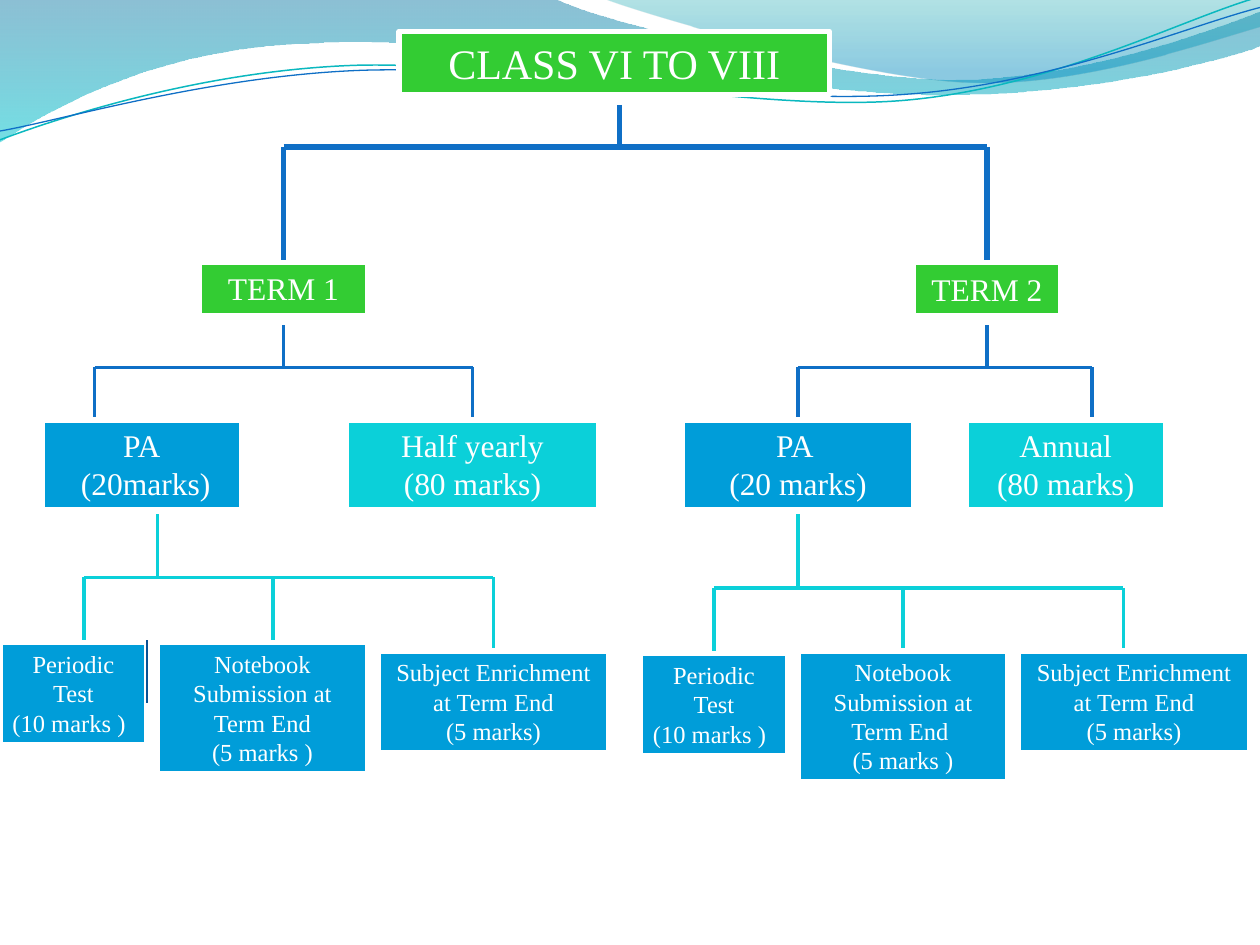
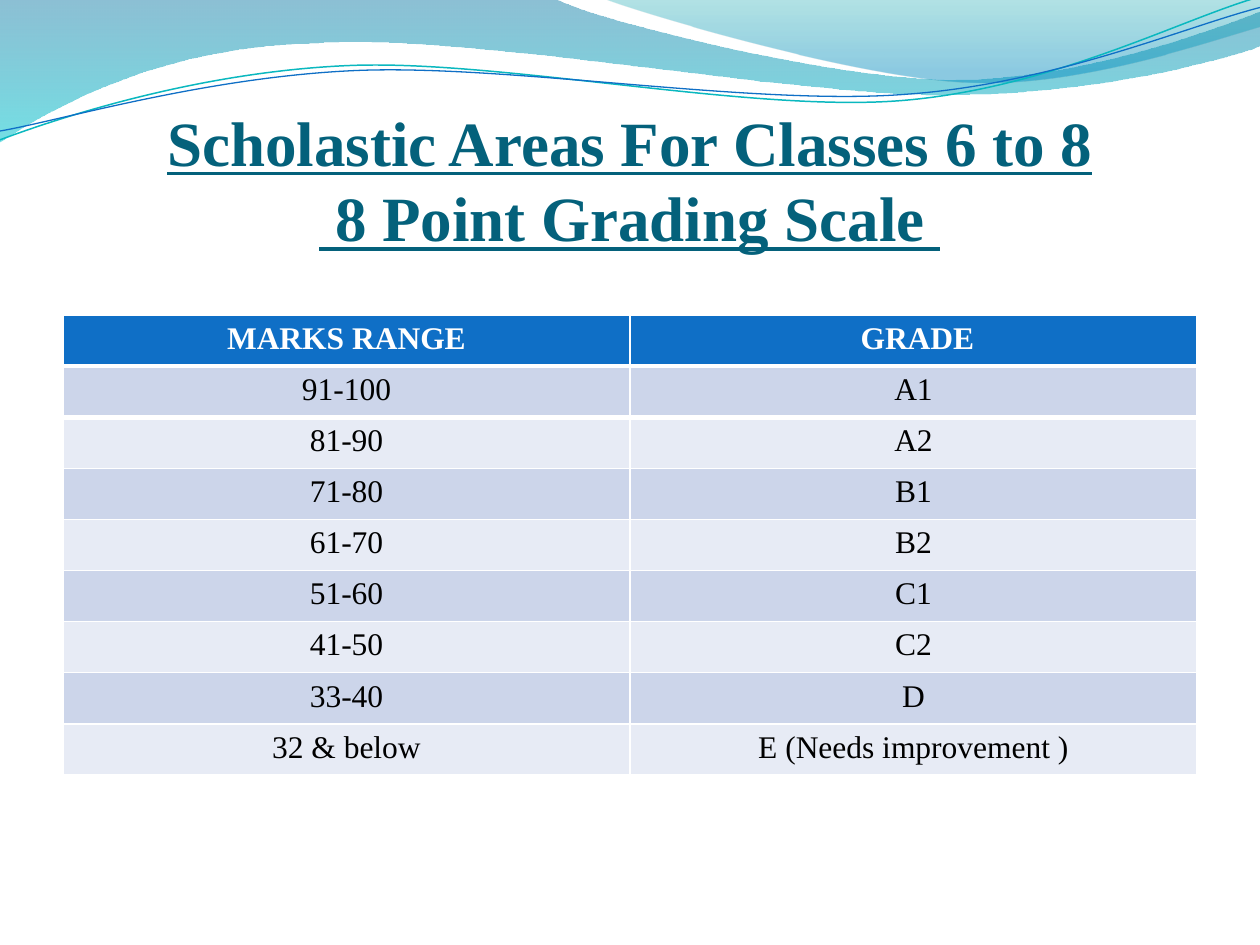
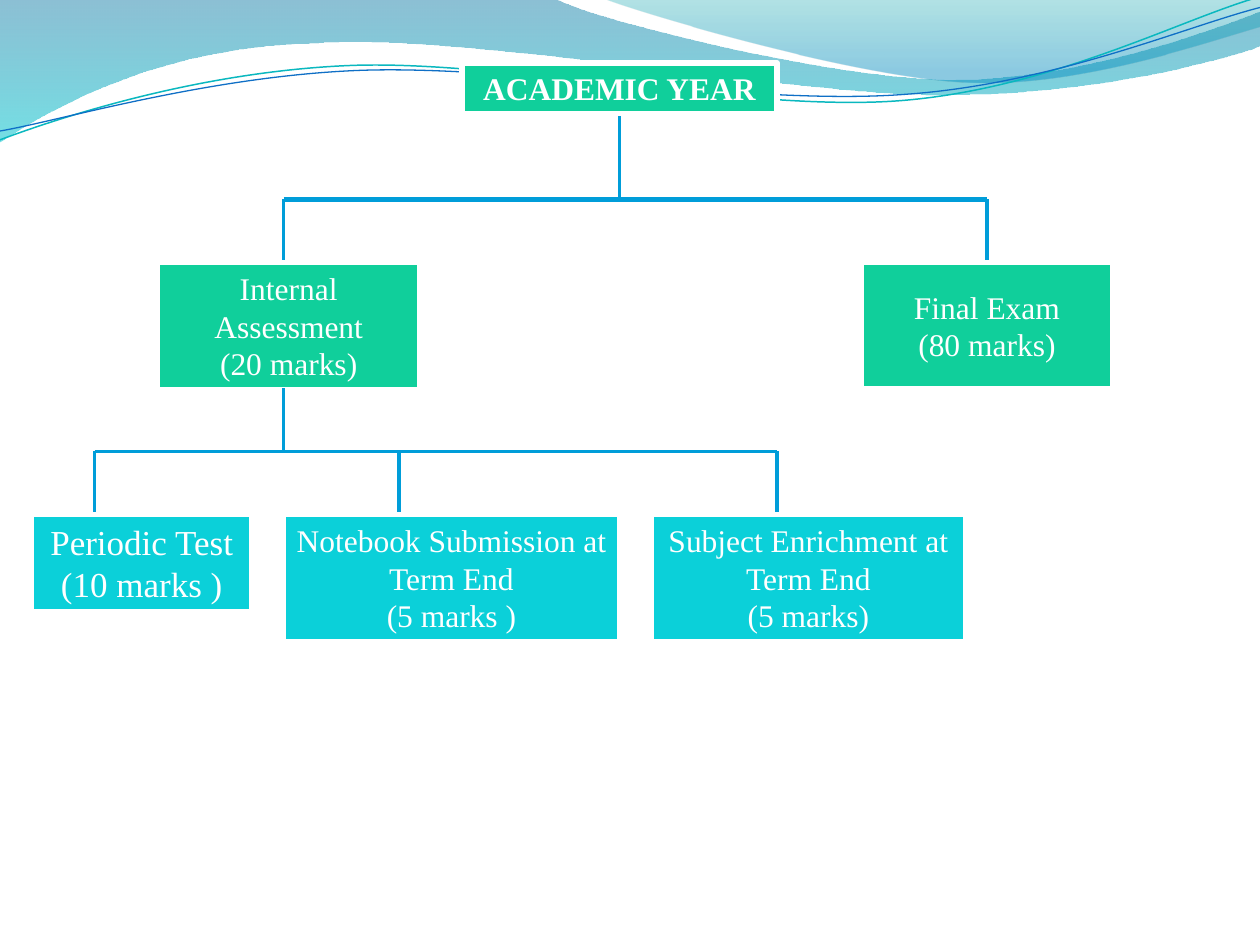
import math

import lxml.etree
import pptx
import pptx.dml.color
import pptx.enum.shapes
import pptx.enum.text
import pptx.oxml.ns
import pptx.util

Inches = pptx.util.Inches
Pt = pptx.util.Pt
RGBColor = pptx.dml.color.RGBColor
PP_ALIGN = pptx.enum.text.PP_ALIGN
MSO_ANCHOR = pptx.enum.text.MSO_ANCHOR
MSO_AUTO_SIZE = pptx.enum.text.MSO_AUTO_SIZE
MSO_SHAPE = pptx.enum.shapes.MSO_SHAPE
MSO_CONNECTOR = pptx.enum.shapes.MSO_CONNECTOR
qn = pptx.oxml.ns.qn

FONT = "Times New Roman"
GRID = 12  # the charts sit on a grid of twelfths of an inch
WHITE = RGBColor(0xFF, 0xFF, 0xFF)
BLACK = RGBColor(0x00, 0x00, 0x00)
NAVY = RGBColor(0x09, 0x52, 0x95)
BLUE = RGBColor(0x0F, 0x6F, 0xC6)
SKY = RGBColor(0x00, 0x9D, 0xD9)
CYAN = RGBColor(0x0B, 0xD0, 0xD9)
MINT = RGBColor(0x10, 0xCF, 0x9B)
GREEN = RGBColor(0x33, 0xCC, 0x33)
TITLE_TEAL = RGBColor(0x04, 0x61, 0x7B)
WAVE_LINE = RGBColor(0x0A, 0xB8, 0xBF)
WAVE_DEEP = RGBColor(0x00, 0x74, 0xA1)
WAVE_AQUA = RGBColor(0x00, 0xC6, 0xCF)
WAVE_TEAL = RGBColor(0x00, 0xA1, 0xA9)
WAVE_BLUE = RGBColor(0x00, 0x8B, 0xBF)
ROW_DARK = RGBColor(0xCC, 0xD5, 0xEA)
ROW_LIGHT = RGBColor(0xE7, 0xEB, 0xF5)


def write_text(tf, text, size=18, color=WHITE, bold=False, underline=False,
               last_align=PP_ALIGN.CENTER):
    """Fill tf with centred paragraphs, one per line; last_align sets the last."""
    tf.text = text
    for p in tf.paragraphs:
        p.alignment = PP_ALIGN.CENTER
        for r in p.runs:
            r.font.name = FONT
            r.font.size = Pt(size)
            r.font.color.rgb = color
            r.font.bold = bold
            r.font.underline = underline
    tf.paragraphs[-1].alignment = last_align


def add_line(s, x1, y1, x2, y2, color, width):
    """Draw a straight line between two grid points."""
    line = s.shapes.add_connector(MSO_CONNECTOR.STRAIGHT,
                                  *[Inches(v / GRID) for v in (x1, y1, x2, y2)])
    line.line.color.rgb = color
    line.line.width = Pt(width)
    lxml.etree.SubElement(line.element.spPr, qn("a:effectLst"))


prs = pptx.Presentation()
prs.slide_width = Inches(10)
prs.slide_height = Inches(7.5)
layout = prs.slide_layouts[6]
class_slide, grade_slide, year_slide = [prs.slides.add_slide(layout) for _ in range(3)]

# Wave band shared by all slides. A 2-number step is a straight line,
# a 6-number step a Bezier curve; stops are (position, colour, opacity %),
# an outline is (colour, width, centre of its tilt).
TILT = 2.7
waves = [
    ([(0, 0), (4.4, -0.01), (4.76, 0.17, 6.64, 0.63, 7.58, 0.63),
      (8.53, 0.63, 9.58, 0.26, 10, 0.09), (10.01, 0.36),
      (9.83, 0.44, 8.7, 0.76, 7.46, 0.75), (6.22, 0.75, 3.82, 0.28, 2.57, 0.34),
      (1.29, 0.36, 0.46, 0.83, -0.01, 1.13), (0, 0)],
     [(0, WAVE_DEEP, 45), (1, WAVE_AQUA, 55)], None),
    ([(4.79, -0.01), (5.09, 0.11, 6.82, 0.62, 7.69, 0.65),
      (8.56, 0.69, 9.61, 0.32, 10, 0.21), (10, 0), (4.79, -0.01)],
     [(0, WAVE_TEAL, 30), (0.8, WAVE_BLUE, 45)], None),
    ([(0, 1.11), (0.48, 0.93, 1.58, 0.57, 2.77, 0.52),
      (3.95, 0.47, 5.93, 0.89, 7.13, 0.8), (8.33, 0.71, 9.38, 0.15, 9.98, -0.02)],
     None, (WAVE_LINE, 0.85, (4.99, 0.57))),
    ([(0, 1.04), (0.47, 0.96, 1.64, 0.61, 2.83, 0.56),
      (4.03, 0.51, 5.97, 0.84, 7.17, 0.75), (8.36, 0.67, 9.41, 0.21, 10, 0.06)],
     None, (BLUE, 0.75, (5, 0.59))),
]
wave_shapes = []
for steps, stops, outline in waves:
    points = [pair for step in steps for pair in zip(step[::2], step[1::2])]
    if outline:
        cx, cy = outline[2]
        cos, sin = math.cos(math.radians(TILT)), math.sin(math.radians(TILT))
        points = [(cx + (x - cx) * cos - (y - cy) * sin,
                   cy + (x - cx) * sin + (y - cy) * cos) for x, y in points]
    points = [(Inches(x), Inches(y)) for x, y in points]
    builder = class_slide.shapes.build_freeform(*points[0])
    builder.add_line_segments(points[1:], close=outline is None)
    sp = builder.convert_to_shape()

    # Join the three points of each curve step into one Bezier segment
    segments = iter(list(sp.element.spPr.iter(qn("a:lnTo"))))
    for step in steps[1:]:
        segment = next(segments)
        if len(step) == 6:
            segment.tag = qn("a:cubicBezTo")
            for _ in range(2):
                extra = next(segments)
                segment.append(extra[0])
                extra.getparent().remove(extra)

    sp.shadow.inherit = False
    if outline:
        sp.rotation = 360 - TILT
        sp.fill.background()
        sp.line.color.rgb, sp.line.width = outline[0], Pt(outline[1])
    else:
        sp.line.fill.background()
        sp.fill.gradient()
        sp.fill.gradient_angle = 270
        for stop, (position, color, _) in zip(sp.fill.gradient_stops, stops):
            stop.position = position
            stop.color.rgb = color
        for clr, (_, _, opacity) in zip(sp.element.spPr.iter(qn("a:srgbClr")), stops):
            lxml.etree.SubElement(clr, qn("a:alpha")).set("val", str(opacity * 1000))
    wave_shapes.append(sp)

for placeholder in list(layout.placeholders):
    layout.shapes.element.remove(placeholder.element)
for sp in wave_shapes:
    layout.shapes.element.append(sp.element)

PERIODIC = "Periodic Test\n(10 marks )"
NOTEBOOK = "Notebook Submission at Term End\n(5 marks )"
NOTEBOOK_TERM_2 = "Notebook Submission at Term End \n(5 marks )"
ENRICHMENT = "Subject Enrichment at Term End\n(5 marks)"
plain = dict(size=18)
small = dict(size=14)
small_left = dict(size=14, last_align=PP_ALIGN.LEFT)
TOP, MIDDLE = MSO_ANCHOR.TOP, MSO_ANCHOR.MIDDLE

# Branch: slide, colour, line width, bar width, trunk x, trunk top, bar y,
# drops as (x, bottom), all in grid units.
# Box: slide, left, top, width in grid units, height in inches, colour, anchor,
# text, format.
upper_branches = [
    (class_slide, BLUE, 3, 3, 59, 10, 14, [(27, 25), (94, 25)]),
    (year_slide, SKY, 2, 3, 59, 11, 19, [(27, 25), (94, 25)]),
]
upper_boxes = [
    (class_slide, 38, 3, 41, 0.5, GREEN, TOP, "CLASS VI TO VIII", dict(size=24)),
    (class_slide, 19, 25, 16, 0.42, GREEN, TOP, "TERM 1", plain),
    (class_slide, 87, 25, 14, 0.42, GREEN, MIDDLE, "TERM 2", plain),
    (year_slide, 44, 6, 30, 0.4, MINT, TOP, "ACADEMIC YEAR", dict(bold=True)),
    (year_slide, 15, 25, 25, 1.01, MINT, TOP, "Internal Assessment\n(20 marks)", plain),
    (year_slide, 82, 25, 24, 1, MINT, MIDDLE, "Final Exam\n(80 marks)", plain),
]
lower_branches = [
    (class_slide, BLUE, 2, 2, 27, 31, 35, [(9, 40), (45, 40)]),
    (class_slide, BLUE, 2, 2, 94, 31, 35, [(76, 40), (104, 40)]),
    (class_slide, CYAN, 2, 2, 15, 49, 55, [(8, 61), (26, 61), (47, 62)]),
    (class_slide, CYAN, 2, 2, 76, 49, 56, [(68, 62), (86, 62), (107, 62)]),
    (year_slide, SKY, 2, 2, 27, 37, 43, [(9, 49), (38, 49), (74, 50)]),
]
lower_boxes = [
    (class_slide, 4, 40, 19, 0.71, SKY, TOP, "PA\n (20marks)", plain),
    (class_slide, 33, 40, 24, 0.71, CYAN, TOP, "Half yearly\n(80 marks)", plain),
    (class_slide, 65, 40, 22, 0.71, SKY, TOP, "PA \n(20 marks)", plain),
    (class_slide, 92, 40, 19, 0.71, CYAN, TOP, "Annual\n(80 marks)", plain),
    (class_slide, 0, 61.2, 14, 0.81, SKY, TOP, PERIODIC, small_left),
    (class_slide, 15, 61.2, 20, 1.04, SKY, TOP, NOTEBOOK, small),
    (class_slide, 36, 62, 22, 0.81, SKY, TOP, ENRICHMENT, small),
    (class_slide, 61, 62.25, 14, 0.81, SKY, TOP, PERIODIC, small_left),
    (class_slide, 76, 62, 20, 1.04, SKY, TOP, NOTEBOOK_TERM_2, small),
    (class_slide, 97, 62, 22, 0.81, SKY, TOP, ENRICHMENT, small),
    (year_slide, 3, 49, 21, 0.77, CYAN, TOP, PERIODIC, dict(size=20)),
    (year_slide, 27, 49, 32, 1.01, CYAN, TOP, NOTEBOOK, plain),
    (year_slide, 62, 49, 30, 1.01, CYAN, TOP, ENRICHMENT, plain),
]
for branches, boxes in [(upper_branches, upper_boxes), (lower_branches, lower_boxes)]:
    for s, color, width, bar_width, trunk_x, top, bar_y, drops in branches:
        add_line(s, trunk_x, top, trunk_x, bar_y, color, width)
        add_line(s, drops[0][0], bar_y, drops[-1][0], bar_y, color, bar_width)
        for x, bottom in drops:
            add_line(s, x, bar_y, x, bottom, color, width)
    for s, x, y, w, h, color, anchor, text, text_format in boxes:
        sp = s.shapes.add_shape(MSO_SHAPE.RECTANGLE, Inches(x / GRID), Inches(y / GRID),
                                Inches(w / GRID), Inches(h))
        sp.shadow.inherit = False
        sp.fill.solid()
        sp.fill.fore_color.rgb = color
        sp.line.color.rgb = WHITE
        sp.line.width = Pt(3)
        tf = sp.text_frame
        tf.word_wrap = True
        tf.vertical_anchor = anchor
        if anchor == TOP:
            tf.auto_size = MSO_AUTO_SIZE.SHAPE_TO_FIT_TEXT
        write_text(tf, text, **text_format)
add_line(class_slide, 14, 61, 14, 67, NAVY, 0.75)

# Grading scale
title = grade_slide.shapes.add_textbox(Inches(0.5), Inches(0.77), Inches(9), Inches(1.25))
tf = title.text_frame
tf.word_wrap = True
tf.vertical_anchor = MSO_ANCHOR.BOTTOM
tf.margin_left = tf.margin_right = tf.margin_bottom = 0
tf.margin_top = Inches(0.05)
write_text(tf, "Scholastic Areas For Classes 6 to 8\v 8 Point Grading Scale ",
           size=36, color=TITLE_TEAL, bold=True, underline=True)

grades = [
    ("MARKS RANGE", " GRADE"),
    ("91-100", "A1"),
    ("81-90", "A2"),
    ("71-80", "B1"),
    ("61-70", "B2"),
    ("51-60", "C1"),
    ("41-50", "C2"),
    ("33-40", "D"),
    ("32 & below", "E (Needs improvement )"),
]
table = grade_slide.shapes.add_table(len(grades), 2, Inches(0.5), Inches(2.5),
                                     Inches(9), Inches(3.65)).table
for i, row in enumerate(grades):
    header = i == 0
    for j, text in enumerate(row):
        cell = table.cell(i, j)
        cell.fill.solid()
        cell.fill.fore_color.rgb = BLUE if header else (ROW_LIGHT, ROW_DARK)[i % 2]
        write_text(cell.text_frame, text, color=WHITE if header else BLACK, bold=header)
        if i < 2:  # thick rule between header and body
            border = lxml.etree.Element(qn("a:lnB" if header else "a:lnT"), w=str(Pt(3)))
            fill = lxml.etree.SubElement(border, qn("a:solidFill"))
            lxml.etree.SubElement(fill, qn("a:srgbClr"), val=str(WHITE))
            cell.fill.fore_color  # fill already set, so the border goes before it
            cell._tc.tcPr.insert(0, border)

prs.save("out.pptx")
